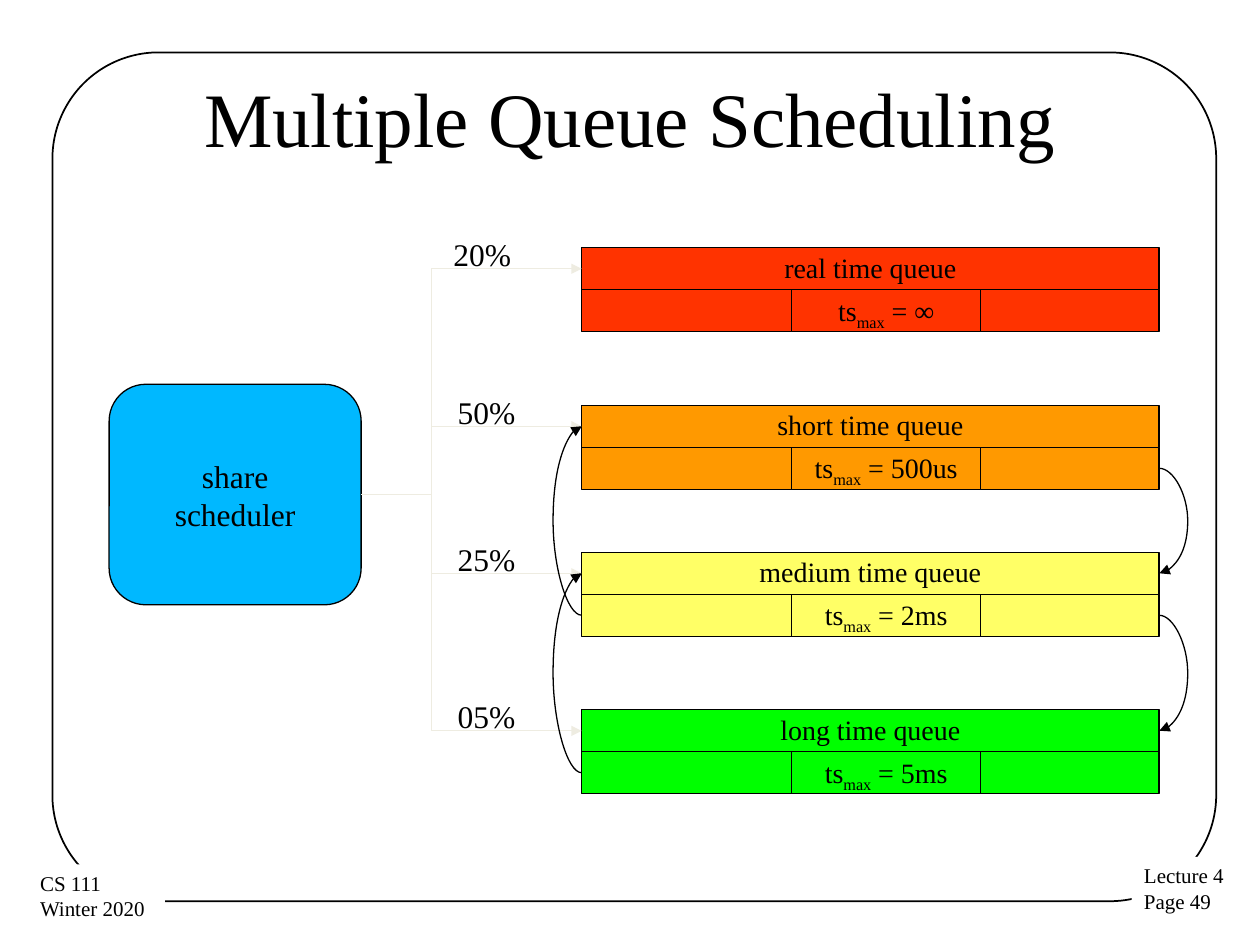
"""Build the Multiple Queue Scheduling slide."""
from dataclasses import dataclass
from typing import NamedTuple, Optional

from lxml import etree
from pptx import Presentation
from pptx.dml.color import RGBColor
from pptx.enum.shapes import MSO_CONNECTOR, MSO_SHAPE
from pptx.enum.text import MSO_ANCHOR, MSO_AUTO_SIZE, PP_ALIGN
from pptx.oxml.ns import qn
from pptx.shapes.autoshape import Shape
from pptx.shapes.connector import Connector
from pptx.shapes.shapetree import SlideShapes
from pptx.util import Pt

RECTANGLE = MSO_SHAPE.RECTANGLE
ROUNDED = MSO_SHAPE.ROUNDED_RECTANGLE
PROCESS = MSO_SHAPE.FLOWCHART_ALTERNATE_PROCESS
ELBOW, CURVE = MSO_CONNECTOR.ELBOW, MSO_CONNECTOR.CURVE
MIDDLE, TOP = MSO_ANCHOR.MIDDLE, MSO_ANCHOR.TOP
CENTER, LEFT = PP_ALIGN.CENTER, PP_ALIGN.LEFT
FIT_SHAPE = MSO_AUTO_SIZE.SHAPE_TO_FIT_TEXT


@dataclass(frozen=True)
class Theme:
    font: str = "Times New Roman"
    ink: str = "000000"
    paper: str = "FFFFFF"
    branch: str = "EEECE1"
    scheduler: str = "00B8FF"
    title_size: float = 44
    label_size: float = 18
    queue_size: float = 16
    footer_size: float = 12
    thin: float = 0.75
    frame: float = 1


class Box(NamedTuple):
    left: float
    top: float
    width: float
    height: float


class Queue(NamedTuple):
    title: str
    limit: str
    share: str
    share_left: float
    top: float
    color: str


class Move(NamedTuple):
    source: int
    target: int
    demotes: bool


THEME = Theme()
QUEUES = (
    Queue("real time queue", "∞", "20%", 252, 141.6, "FF3300"),
    Queue("short time queue", "500us", "50%", 254.4, 231.6, "FF9900"),
    Queue("medium time queue", "2ms", "25%", 254.4, 315.6, "FFFF66"),
    Queue("long time queue", "5ms", "05%", 254.4, 405.6, "00FF00"),
)
MOVES = (Move(1, 2, True), Move(2, 3, True), Move(3, 2, False), Move(2, 1, False))
FOOTERS = (
    ("Lecture 4\nPage 49", Box(646.6, 489.6, 61.2, 36.7)),
    ("CS 111\nWinter 2020", Box(15.8, 494, 78.5, 36.7)),
)
SCHEDULER = Box(62.4, 219.6, 144, 126)
QUEUE_LEFT, ROW = 332.4, 24
CELL_WIDTHS = (120, 108, 102)
QUEUE_WIDTH = sum(CELL_WIDTHS)
BRANCH_BEND = 0.318
BULGE, CURVE_SPAN = 18, 0.125


def add_block(shapes: SlideShapes, kind: int, box: Box, fill: Optional[str],
              line_width: float = THEME.thin) -> Shape:
    """Add a shape, leaving out the outline when its width is zero."""
    block = shapes.add_shape(kind, *map(Pt, box))
    block.shadow.inherit = False
    if fill:
        block.fill.solid()
        block.fill.fore_color.rgb = RGBColor.from_string(fill)
    else:
        block.fill.background()
    if line_width:
        block.line.color.rgb = RGBColor.from_string(THEME.ink)
        block.line.width = Pt(line_width)
    else:
        block.line.fill.background()
    return block


def style_text(holder: Shape, size: float, align: int = CENTER, anchor: int = MIDDLE,
               wrap: bool = False, spacing: Optional[float] = None) -> None:
    """Format all text already placed in a shape."""
    frame = holder.text_frame
    frame.word_wrap = wrap
    frame.vertical_anchor = anchor
    for paragraph in frame.paragraphs:
        paragraph.alignment = align
        paragraph.line_spacing = spacing
        for run in paragraph.runs:
            run.font.name = THEME.font
            run.font.size = Pt(size)
            run.font.color.rgb = RGBColor.from_string(THEME.ink)


def add_label(shapes: SlideShapes, text: str, box: Box) -> Shape:
    """Add a text box holding the given text."""
    label = shapes.add_textbox(*map(Pt, box))
    label.text_frame.text = text
    return label


def add_queue(shapes: SlideShapes, queue: Queue) -> None:
    """Draw a queue header above its three cells."""
    header = add_block(shapes, RECTANGLE,
                       Box(QUEUE_LEFT, queue.top, QUEUE_WIDTH, ROW), queue.color)
    header.text_frame.text = queue.title
    style_text(header, THEME.queue_size, spacing=0.93)
    cells = []
    left = QUEUE_LEFT
    for width in CELL_WIDTHS:
        cells.append(add_block(shapes, RECTANGLE,
                               Box(left, queue.top + ROW, width, ROW), queue.color))
        left += width
    limit = cells[1]
    paragraph = limit.text_frame.paragraphs[0]
    for part in ("ts", "max", f" = {queue.limit}"):
        paragraph.add_run().text = part
    style_text(limit, THEME.queue_size, spacing=0.93)
    paragraph.runs[1].font._element.set("baseline", "-25000")


def add_arrow(shapes: SlideShapes, kind: int, start: tuple[float, float],
              end: tuple[float, float], color: str, bend: float) -> Connector:
    """Add an arrow whose bend is a fraction of its width."""
    arrow = shapes.add_connector(kind, *map(Pt, (*start, *end)))
    arrow.line.color.rgb = RGBColor.from_string(color)
    arrow.line.width = Pt(THEME.thin)
    properties = arrow._element.spPr
    guides = properties.find(qn("a:prstGeom")).get_or_add_avLst()
    etree.SubElement(guides, qn("a:gd"), name="adj1", fmla=f"val {round(bend * 100000)}")
    etree.SubElement(arrow.line._get_or_add_ln(), qn("a:tailEnd"), type="triangle")
    etree.SubElement(properties, qn("a:effectLst"))
    return arrow


def add_move(shapes: SlideShapes, move: Move) -> None:
    """Draw a curve from one queue's cells to another's header."""
    edge = QUEUE_LEFT + QUEUE_WIDTH if move.demotes else QUEUE_LEFT
    bulge = BULGE if move.demotes else -BULGE
    start = (edge, QUEUES[move.source].top + ROW * 1.5)
    end = (edge + CURVE_SPAN, QUEUES[move.target].top + ROW / 2)
    add_arrow(shapes, CURVE, start, end, THEME.ink, bulge / CURVE_SPAN)


def main() -> None:
    """Assemble and save the slide."""
    deck = Presentation()
    deck.slide_width, deck.slide_height = Pt(720), Pt(540)
    shapes = deck.slides.add_slide(deck.slide_layouts[6]).shapes

    border = add_block(shapes, ROUNDED, Box(30, 30, 665, 485), None, THEME.frame)
    border.adjustments[0] = 0.125
    for text, box in FOOTERS:
        footer = add_block(shapes, RECTANGLE, box, THEME.paper, 0)
        footer.text_frame.text = text
        style_text(footer, THEME.footer_size, LEFT, TOP)
        footer.text_frame.auto_size = FIT_SHAPE
    title = add_label(shapes, "Multiple Queue Scheduling", Box(36, 21.6, 648, 90))
    style_text(title, THEME.title_size, wrap=True)

    for queue in QUEUES:
        add_queue(shapes, queue)
    scheduler = add_block(shapes, PROCESS, SCHEDULER, THEME.scheduler)
    scheduler.text_frame.text = "share\nscheduler"
    style_text(scheduler, THEME.label_size)

    outlet = (SCHEDULER.left + SCHEDULER.width, SCHEDULER.top + SCHEDULER.height / 2)
    for queue in QUEUES:
        add_arrow(shapes, ELBOW, outlet, (QUEUE_LEFT, queue.top + ROW / 2),
                  THEME.branch, BRANCH_BEND)
    for queue in QUEUES:
        share = add_label(shapes, queue.share,
                          Box(queue.share_left, queue.top - 10.8, 47.5, 28.8))
        style_text(share, THEME.label_size, LEFT, TOP)
        share.text_frame.auto_size = FIT_SHAPE
    for move in MOVES:
        add_move(shapes, move)
    deck.save("out.pptx")


if __name__ == "__main__":
    main()
